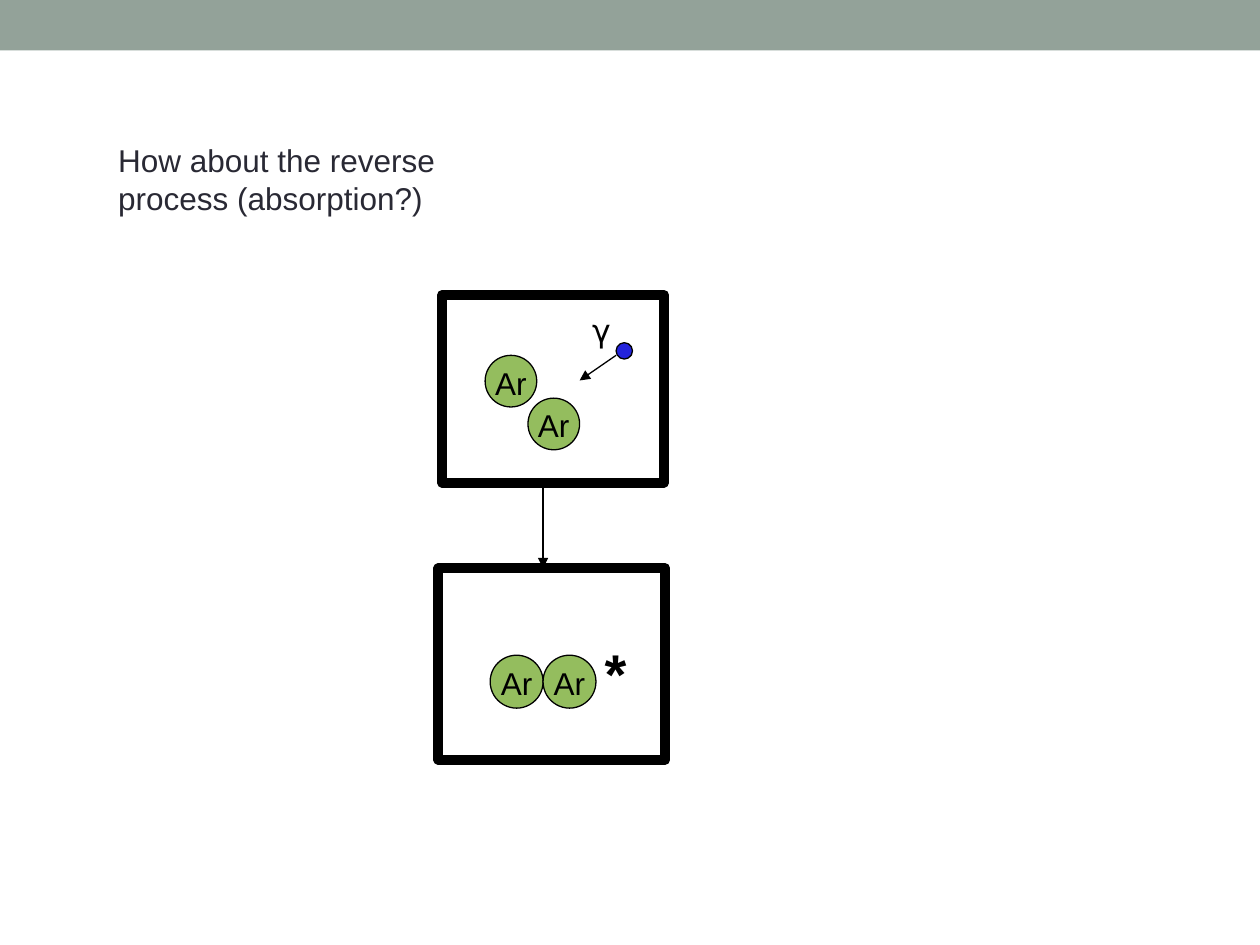
import dataclasses

import pptx
import pptx.dml.color
import pptx.enum.shapes
import pptx.enum.text
import pptx.oxml
import pptx.oxml.ns
import pptx.util

Inches = pptx.util.Inches
SHAPE = pptx.enum.shapes.MSO_SHAPE
ALIGN = pptx.enum.text.PP_ALIGN
ANCHOR = pptx.enum.text.MSO_ANCHOR


@dataclasses.dataclass(frozen=True)
class Theme:
    banner: str = "93A299"
    ink: str = "292934"
    black: str = "000000"
    white: str = "FFFFFF"
    argon: str = "94BD5E"
    photon: str = "2323DC"
    font: str = "Arial"
    greek: str = "DejaVu Sans"
    body: int = 18
    star: int = 32
    thin: float = 0.75
    thick: float = 5.67


class Diagram:
    """Draws styled elements on the current slide."""

    def __init__(self, slide, theme):
        self.s = slide
        self.t = theme

    def color(self, value):
        return pptx.dml.color.RGBColor.from_string(value)

    def shape(self, kind, box, fill, width=None):
        sp = self.s.shapes.add_shape(kind, *map(Inches, box))
        sp.shadow.inherit = False
        sp.fill.solid()
        sp.fill.fore_color.rgb = self.color(fill)
        if width is None:
            sp.line.fill.background()
        else:
            sp.line.color.rgb = self.color(self.t.black)
            sp.line.width = pptx.util.Pt(width)
        return sp

    def text(self, sp, words, color, frame, para=None, **font):
        tf = sp.text_frame
        p = tf.paragraphs[0]
        r = p.add_run()
        r.text = words
        style = {"name": self.t.font, "size": pptx.util.Pt(self.t.body), **font}
        for target, values in ((tf, frame), (p, para or {}), (r.font, style)):
            for name, value in values.items():
                setattr(target, name, value)
        r.font.color.rgb = self.color(color)

    def frame(self, box):
        self.shape(SHAPE.RECTANGLE, box, self.t.white, self.t.thick)

    def atom(self, x, y, size):
        sp = self.shape(SHAPE.OVAL, (x, y, size, size), self.t.argon, self.t.thin)
        frame = {"word_wrap": False, "vertical_anchor": ANCHOR.MIDDLE,
                 "margin_top": Inches(0.07), "margin_bottom": Inches(0.05)}
        self.text(sp, "Ar", self.t.black, frame, {"alignment": ALIGN.CENTER})

    def label(self, box, words, color, top=0.05, para=None, **font):
        sp = self.s.shapes.add_textbox(*map(Inches, box))
        frame = {"word_wrap": True, "margin_top": Inches(top)}
        self.text(sp, words, color, frame, para, **font)

    def arrow(self, start, end):
        straight = pptx.enum.shapes.MSO_CONNECTOR.STRAIGHT
        c = self.s.shapes.add_connector(straight, *map(Inches, start + end))
        c.line.color.rgb = self.color(self.t.black)
        c.line.width = pptx.util.Pt(self.t.thin)
        ns = pptx.oxml.ns.nsdecls("a")
        props = c.element.spPr
        props.find(pptx.oxml.ns.qn("a:ln")).append(
            pptx.oxml.parse_xml(f'<a:tailEnd {ns} type="triangle"/>'))
        props.append(pptx.oxml.parse_xml(f"<a:effectLst {ns}/>"))


def main():
    prs = pptx.Presentation()
    prs.slide_width, prs.slide_height = Inches(10), Inches(7.5)
    t = Theme()
    d = Diagram(prs.slides.add_slide(prs.slide_layouts[6]), t)

    d.shape(SHAPE.RECTANGLE, (0, 0, 10, 0.4), t.banner)

    d.frame((3.48, 4.51, 1.8, 1.52))
    for x in (3.89, 4.31):
        d.atom(x, 5.2, 0.42)
    d.label((4.7, 4.99, 0.69, 0.53), "*", t.black, top=0.08,
            size=pptx.util.Pt(t.star), bold=True)
    d.arrow((4.31, 3.83), (4.31, 4.51))

    d.label((0.84, 1.07, 3.46, 0.71),
            "How about the reverse process (absorption?)", t.ink)

    d.frame((3.51, 2.34, 1.76, 1.49))
    for x, y in ((4.19, 3.16), (3.85, 2.82)):
        d.atom(x, y, 0.41)
    d.shape(SHAPE.OVAL, (4.89, 2.72, 0.13, 0.13), t.photon, t.thin)
    d.arrow((4.89, 2.82), (4.6, 3.02))
    d.label((4.6, 2.48, 0.68, 0.05), "γ", t.black,
            para={"line_spacing": 0.98}, name=t.greek)

    prs.save("out.pptx")


if __name__ == "__main__":
    main()
